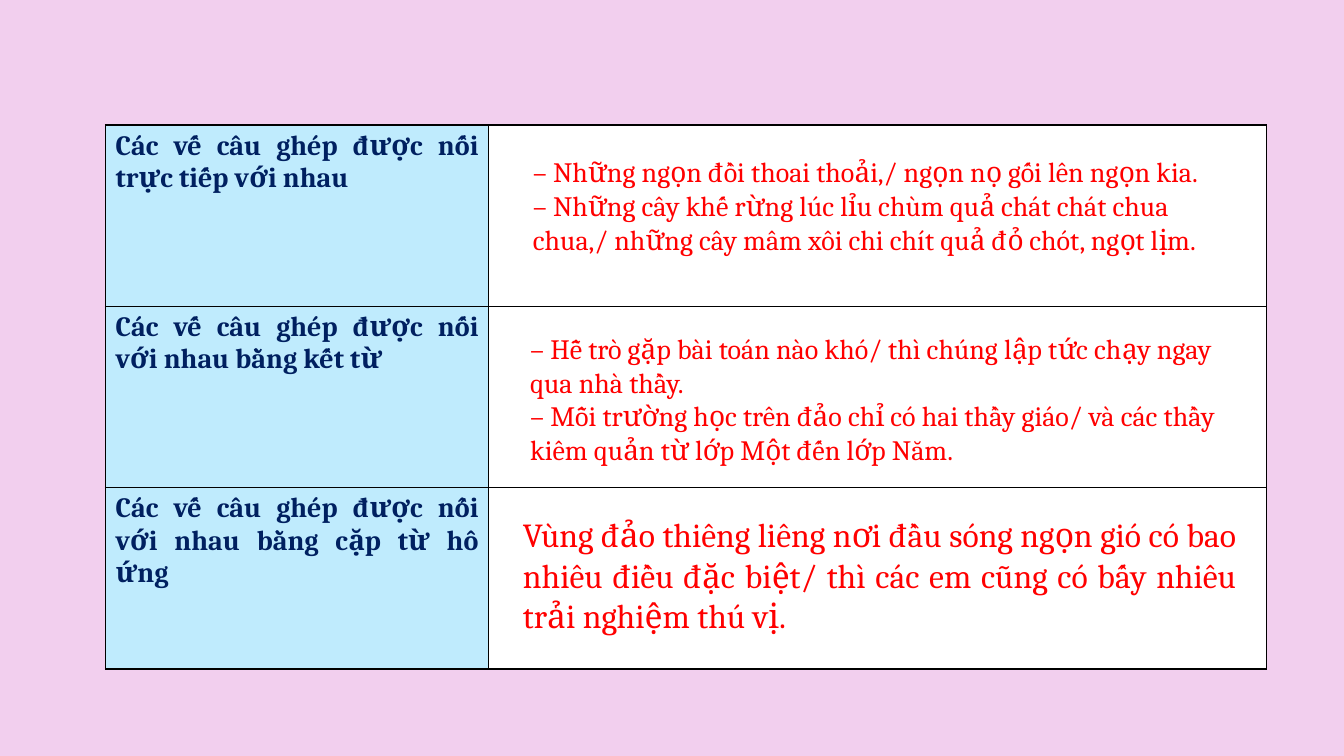
import pptx
import pptx.util
import pptx.dml.color
import pptx.enum.text
import pptx.oxml
import pptx.oxml.ns

Cm = pptx.util.Cm
Pt = pptx.util.Pt
Align = pptx.enum.text.PP_ALIGN


def color(code):
    return pptx.dml.color.RGBColor.from_string(code)


def style(para, text, look, align):
    run = para.add_run()
    run.text = text
    para.alignment = align
    for key, value in look.items():
        setattr(run.font, key, value)
    run.font.color.rgb = color("002060" if look["bold"] else "FF0000")


deck = pptx.Presentation()
deck.slide_width = Cm(33.87)
deck.slide_height = Cm(19.05)
slide = deck.slides.add_slide(deck.slide_layouts[6])
slide.background.fill.solid()
slide.background.fill.fore_color.rgb = color("F2CFEE")

links = [
    "Các vế câu ghép được nối trực tiếp với nhau",
    "Các vế câu ghép được nối với nhau bằng kết từ",
    "Các vế câu ghép được nối với nhau bằng cặp từ hô ứng",
]
frame = slide.shapes.add_table(3, 2, Cm(2.66), Cm(3.15), Cm(29.26), Cm(13.71))
table = frame.table
for col, width in zip(table.columns, (9.65, 19.61)):
    col.width = Cm(width)

space = pptx.oxml.ns.nsdecls("a")
for row, link in zip(table.rows, links):
    row.height = Cm(4.57)
    for cell, fill in zip(row.cells, ("BFEBFD", "FFFFFF")):
        props = cell._tc.get_or_add_tcPr()
        for side in ("lnL", "lnR", "lnT", "lnB"):
            props.append(pptx.oxml.parse_xml(
                f'<a:{side} {space} w="12700"><a:solidFill>'
                f'<a:srgbClr val="000000"/></a:solidFill></a:{side}>'
            ))
        cell.fill.solid()
        cell.fill.fore_color.rgb = color(fill)
    look = {"name": "Cambria", "size": Pt(20), "bold": True}
    style(row.cells[0].text_frame.paragraphs[0], link, look, Align.JUSTIFY)

notes = [
    (13.18, 3.78, 2.82, 20, Align.LEFT, [
        "– Những ngọn đồi thoai thoải,/ ngọn nọ gối lên ngọn kia.",
        "– Những cây khế rừng lúc lỉu chùm quả chát chát chua chua,/ "
        "những cây mâm xôi chi chít quả đỏ chót, ngọt lịm.",
    ]),
    (13.11, 8.23, 3.68, 20, Align.LEFT, [
        "– Hễ trò gặp bài toán nào khó/ thì chúng lập tức chạy ngay qua nhà thầy.",
        "– Mỗi trường học trên đảo chỉ có hai thầy giáo/ và các thầy "
        "kiêm quản từ lớp Một đến lớp Năm.",
    ]),
    (12.93, 12.83, 3.33, 24, Align.JUSTIFY, [
        "Vùng đảo thiêng liêng nơi đầu sóng ngọn gió có bao nhiêu điều "
        "đặc biệt/ thì các em cũng có bấy nhiêu trải nghiệm thú vị.",
    ]),
]
for left, top, height, size, align, lines in notes:
    box = slide.shapes.add_textbox(Cm(left), Cm(top), Cm(18.47), Cm(height))
    body = box.text_frame
    body.word_wrap = True
    body.auto_size = pptx.enum.text.MSO_AUTO_SIZE.SHAPE_TO_FIT_TEXT
    look = {"name": "Cambria", "size": Pt(size), "bold": False}
    for index, line in enumerate(lines):
        para = body.add_paragraph() if index else body.paragraphs[0]
        style(para, line, look, align)

deck.save("out.pptx")
